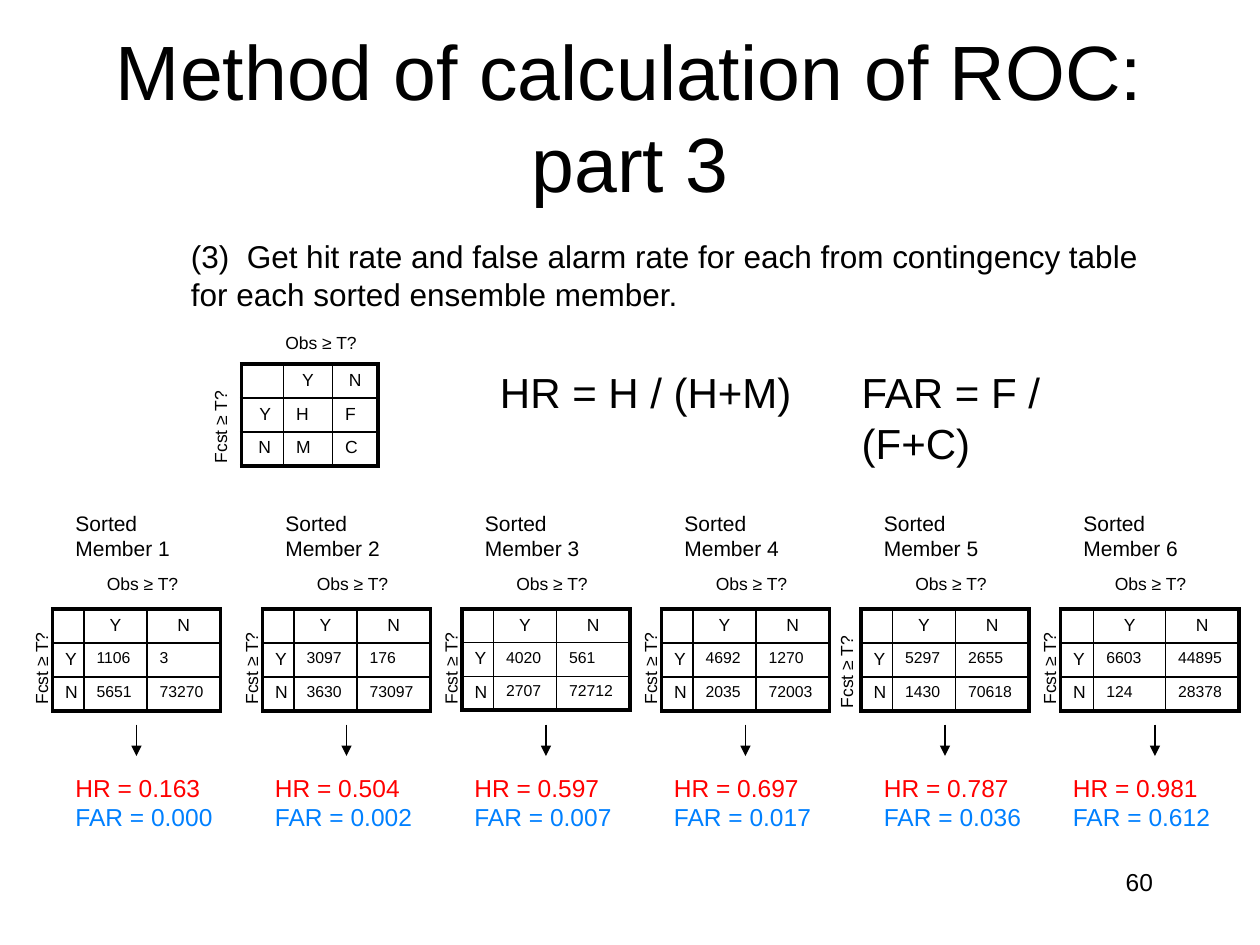
import pptx
import pptx.util
import pptx.dml.color
import pptx.enum.shapes
import pptx.enum.text
import pptx.oxml
import pptx.oxml.ns

Pt = pptx.util.Pt
RGB = pptx.dml.color.RGBColor
Align = pptx.enum.text.PP_ALIGN
Fit = pptx.enum.text.MSO_AUTO_SIZE
BLACK = RGB(0, 0, 0)
RED = RGB(0xFF, 0, 0)
BLUE = RGB(0, 0x80, 0xFF)
FONT = "Arial"

TITLE = ["Method of calculation of ROC:", "part 3"]
STEP = ["(3)  Get hit rate and false alarm rate for each from contingency table",
        "for each sorted ensemble member."]
FORMULAS = [(278.6, "HR = H / (H+M)"), (485.3, "FAR = F / (F+C)")]
PAGE = "60"
KEY = [["H", "F"], ["M", "C"]]
COLS = (18, 36, 42)
WIDE = (19, 41, 42)
ROW = 19.4
# counts, hit rate, false alarm rate
MEMBERS = [
    ([["1106", "3"], ["5651", "73270"]], "0.163", "0.000"),
    ([["3097", "176"], ["3630", "73097"]], "0.504", "0.002"),
    ([["4020", "561"], ["2707", "72712"]], "0.597", "0.007"),
    ([["4692", "1270"], ["2035", "72003"]], "0.697", "0.017"),
    ([["5297", "2655"], ["1430", "70618"]], "0.787", "0.036"),
    ([["6603", "44895"], ["124", "28378"]], "0.981", "0.612"),
]
LEFTS = [30] + [150 + 114 * i for i in range(5)]
# member number: settings that differ from the usual
SPECIAL = {1: {"rate": 6}, 3: {"row": 18.7},
           5: {"rate": 6, "side": -38.4, "long": 60},
           6: {"cols": WIDE, "arrow": 54}}
USUAL = {"rate": 0, "row": ROW, "side": -34.3, "long": 56, "cols": COLS, "arrow": 48}

deck = pptx.Presentation()
deck.slide_width, deck.slide_height = Pt(720), Pt(540)
slide = deck.slides.add_slide(deck.slide_layouts[5])


def style(font, size, color=BLACK):
    font.name, font.size, font.color.rgb = FONT, Pt(size), color


def write(par, text, size, color=BLACK, align=Align.LEFT):
    par.alignment = align
    run = par.add_run()
    run.text = text
    style(run.font, size, color)


def label(x, y, w, h, lines, size, colors=(BLACK, BLACK), align=Align.LEFT, turn=0):
    box = slide.shapes.add_textbox(Pt(x), Pt(y), Pt(w), Pt(h))
    box.rotation = turn
    frame = box.text_frame
    frame.word_wrap = False
    frame.auto_size = Fit.SHAPE_TO_FIT_TEXT
    for i, (line, color) in enumerate(zip(lines, colors)):
        par = frame.add_paragraph() if i else frame.paragraphs[0]
        write(par, line, size, color, align)


def edge(cell, side, width):
    """Draw one border of a cell; side is L, R, T or B."""
    space = pptx.oxml.ns.nsdecls("a")
    cell._tc.get_or_add_tcPr().append(pptx.oxml.parse_xml(
        f'<a:ln{side} {space} w="{Pt(width)}"><a:solidFill>'
        f'<a:srgbClr val="{BLACK}"/></a:solidFill></a:ln{side}>'))


def grid(x, y, cols, row, counts, size):
    """Place a contingency table with Y and N heads."""
    cells = [["", "Y", "N"], ["Y"] + counts[0], ["N"] + counts[1]]
    table = slide.shapes.add_table(3, 3, Pt(x), Pt(y), Pt(sum(cols)), Pt(3 * row)).table
    table.first_row = table.horz_banding = False
    for i, width in enumerate(cols):
        table.columns[i].width = Pt(width)
        table.rows[i].height = Pt(row)
    for r, line in enumerate(cells):
        for c, text in enumerate(line):
            cell = table.cell(r, c)
            for side, outer in (("L", c == 0), ("R", c == 2), ("T", r == 0), ("B", r == 2)):
                edge(cell, side, 2.25 if outer else 1)
            cell.fill.background()
            par = cell.text_frame.paragraphs[0]
            if not text:
                style(par.font, 10)
                continue
            align = Align.CENTER if r == 0 else Align.RIGHT if c == 0 else Align.LEFT
            write(par, text, size if r and c else 10, align=align)


def arrow(x, top, end):
    line = slide.shapes.add_connector(
        pptx.enum.shapes.MSO_CONNECTOR.STRAIGHT, Pt(x), Pt(top), Pt(x), Pt(end))
    line.line.color.rgb = BLACK
    line.line.width = Pt(0.75)
    space = pptx.oxml.ns.nsdecls("a")
    line.line._get_or_add_ln().append(
        pptx.oxml.parse_xml(f'<a:tailEnd {space} type="triangle"/>'))
    line._element.spPr.append(pptx.oxml.parse_xml(f"<a:effectLst {space}/>"))


def axes(obs, top, side, mid, long=56):
    """Label the columns and, turned upright, the rows of a table."""
    label(obs, top, 55.5, 19.4, ["Obs ≥ T?"], 10)
    label(side, mid, long, 19.4, ["Fcst ≥ T?"], 10, turn=270)


title = slide.shapes.title
title.left, title.top, title.width, title.height = Pt(54), Pt(36), Pt(612), Pt(60)
title.text_frame.auto_size = Fit.NONE
title.text_frame.vertical_anchor = pptx.enum.text.MSO_ANCHOR.MIDDLE
head = title.text_frame.paragraphs[0]
write(head, TITLE[0], 44, align=Align.CENTER)
head.add_line_break()
write(head, TITLE[1], 44, align=Align.CENTER)

label(102, 132, 561, 50.4, STEP, 18)
for x, text in FORMULAS:
    label(x, 206, 182, 36, [text], 24)
grid(138, 208, (24, 28, 26), ROW, KEY, 10)
axes(156, 186, 98, 234)

for n, (x, (counts, hit, alarm)) in enumerate(zip(LEFTS, MEMBERS), 1):
    opts = {**USUAL, **SPECIAL.get(n, {})}
    label(x + 6, 288, 68.4, 36, ["Sorted", f"Member {n}"], 12)
    axes(x + 24, 324, x + opts["side"], 372, opts["long"])
    grid(x, 348, opts["cols"], opts["row"], counts, 9)
    arrow(x + opts["arrow"], 414, 432)
    label(x + opts["rate"], 438, 93.6, 41,
          [f"HR = {hit}", f"FAR = {alarm}"], 14, (RED, BLUE))

label(516, 492, 150, 36, [PAGE], 14, align=Align.RIGHT)
deck.save("out.pptx")
